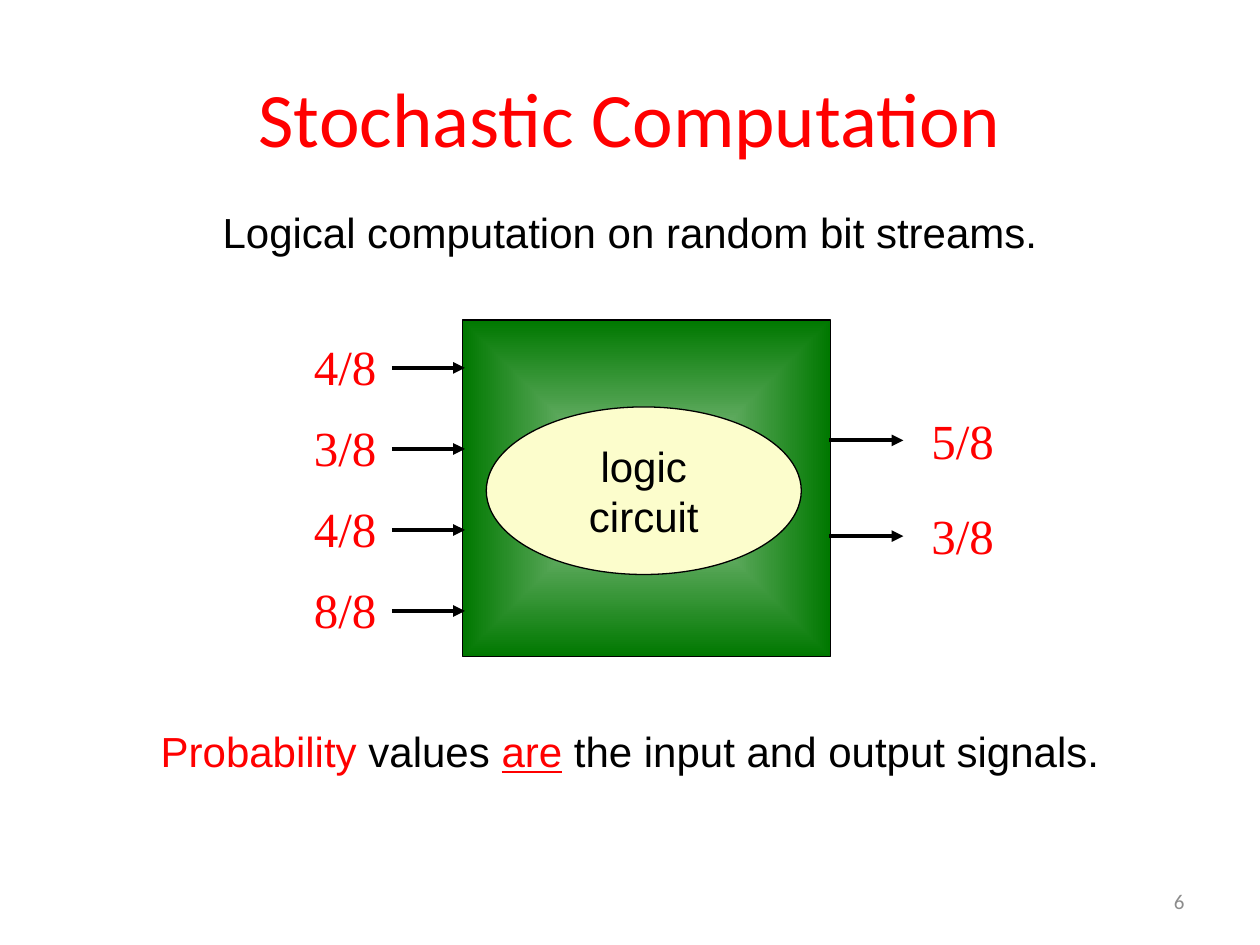
from lxml import etree
from pptx import Presentation
from pptx.dml.color import RGBColor
from pptx.enum.shapes import MSO_CONNECTOR as Conn, MSO_SHAPE as Shape
from pptx.enum.text import MSO_ANCHOR as Anchor, PP_ALIGN as Align
from pptx.oxml import parse_xml
from pptx.oxml.ns import nsdecls, qn
from pptx.util import Inches, Pt

RED = RGBColor(0xFF, 0x00, 0x00)
BLACK = RGBColor(0x00, 0x00, 0x00)
GREY = RGBColor(0x8C, 0x8C, 0x8C)
CREAM = RGBColor(0xFC, 0xFD, 0xCC)
MINT = RGBColor(0x9F, 0xCC, 0x9F)
GREEN = RGBColor(0x00, 0x78, 0x00)

prs = Presentation()
prs.slide_width, prs.slide_height = Inches(10), Inches(7.5)
slide = prs.slides.add_slide(prs.slide_layouts[5])
shapes = slide.shapes


def write(shape, parts, font, size, align=Align.CENTER, wrap=True):
    """Fill a shape with one paragraph of (text, colour) parts."""
    frame = shape.text_frame
    frame.word_wrap = wrap
    para = frame.paragraphs[0]
    para.alignment = align
    for text, color in parts:
        run = para.add_run()
        run.text = text
        run.font.name, run.font.size = font, Pt(size)
        run.font.color.rgb = color
    return para


def add_port(left, top, text, start, end, line_y):
    """Add a probability label and the arrow of its signal."""
    box = shapes.add_textbox(Inches(left), Inches(top), Inches(0.7), Inches(0.57))
    write(box, [(text, RED)], "Times New Roman", 28, wrap=False)
    arrow = shapes.add_connector(Conn.STRAIGHT, Inches(start), Inches(line_y),
                                 Inches(end), Inches(line_y))
    arrow.line.color.rgb = BLACK
    arrow.line.width = Pt(2.25)
    etree.SubElement(arrow.line._get_or_add_ln(), qn("a:tailEnd"), type="triangle")
    etree.SubElement(arrow._element.spPr, qn("a:effectLst"))


# Title and sentences
title = shapes.title
title.left, title.top = Inches(0.5), Inches(0.3)
title.width, title.height = Inches(9), Inches(1.25)
title.text_frame.vertical_anchor = Anchor.MIDDLE
write(title, [("Stochastic Computation", RED)], "Calibri", 44)

intro = shapes.add_textbox(0, Inches(1.59), Inches(10), Inches(0.57))
write(intro, [("Logical computation on random bit streams.", BLACK)], "Arial", 24)

closing = shapes.add_textbox(0, Inches(5.71), Inches(10), Inches(0.57))
para = write(closing, [("Probability ", RED), ("values ", BLACK), ("are", RED),
                       (" the input and output signals.", BLACK)], "Arial", 24)
para.runs[2].font.underline = True

# Circuit block
block = shapes.add_shape(Shape.RECTANGLE, Inches(3.67), Inches(2.54),
                         Inches(2.92), Inches(2.67))
block.fill.background()
block._element.spPr.replace(block._element.spPr.find(qn("a:noFill")), parse_xml(
    f'<a:gradFill {nsdecls("a")} rotWithShape="1"><a:gsLst>'
    f'<a:gs pos="0"><a:srgbClr val="{MINT}"/></a:gs>'
    f'<a:gs pos="100000"><a:srgbClr val="{GREEN}"/></a:gs></a:gsLst>'
    '<a:path path="shape"><a:fillToRect l="50000" t="50000" r="50000" b="50000"/>'
    '</a:path></a:gradFill>'))

core = shapes.add_shape(Shape.OVAL, Inches(3.86), Inches(3.23),
                        Inches(2.5), Inches(1.33))
core.fill.solid()
core.fill.fore_color.rgb = CREAM
core.text_frame.vertical_anchor = Anchor.MIDDLE
para = write(core, [("logic", BLACK)], "Arial", 24, wrap=False)
para.add_line_break()
write(core, [("circuit", BLACK)], "Arial", 24, wrap=False)

for shape in (block, core):
    shape.shadow.inherit = False
    shape.line.color.rgb = BLACK
    shape.line.width = Pt(0.75)

# Inputs and outputs
for i, text in enumerate(["4/8", "3/8", "4/8", "8/8"]):
    add_port(2.39, 2.62 + i * 0.643, text, 3.11, 3.69, 2.92 + i * 0.643)
for i, text in enumerate(["5/8", "3/8"]):
    add_port(7.29, 3.21 + i * 0.75, text, 6.58, 7.17, 3.495 + i * 0.76)

# Slide number
number = shapes.add_textbox(Inches(7.17), Inches(6.95), Inches(2.33), Inches(0.4))
number.text_frame.vertical_anchor = Anchor.MIDDLE
write(number, [("6", GREY)], "Calibri", 12, Align.RIGHT)

prs.save("out.pptx")
